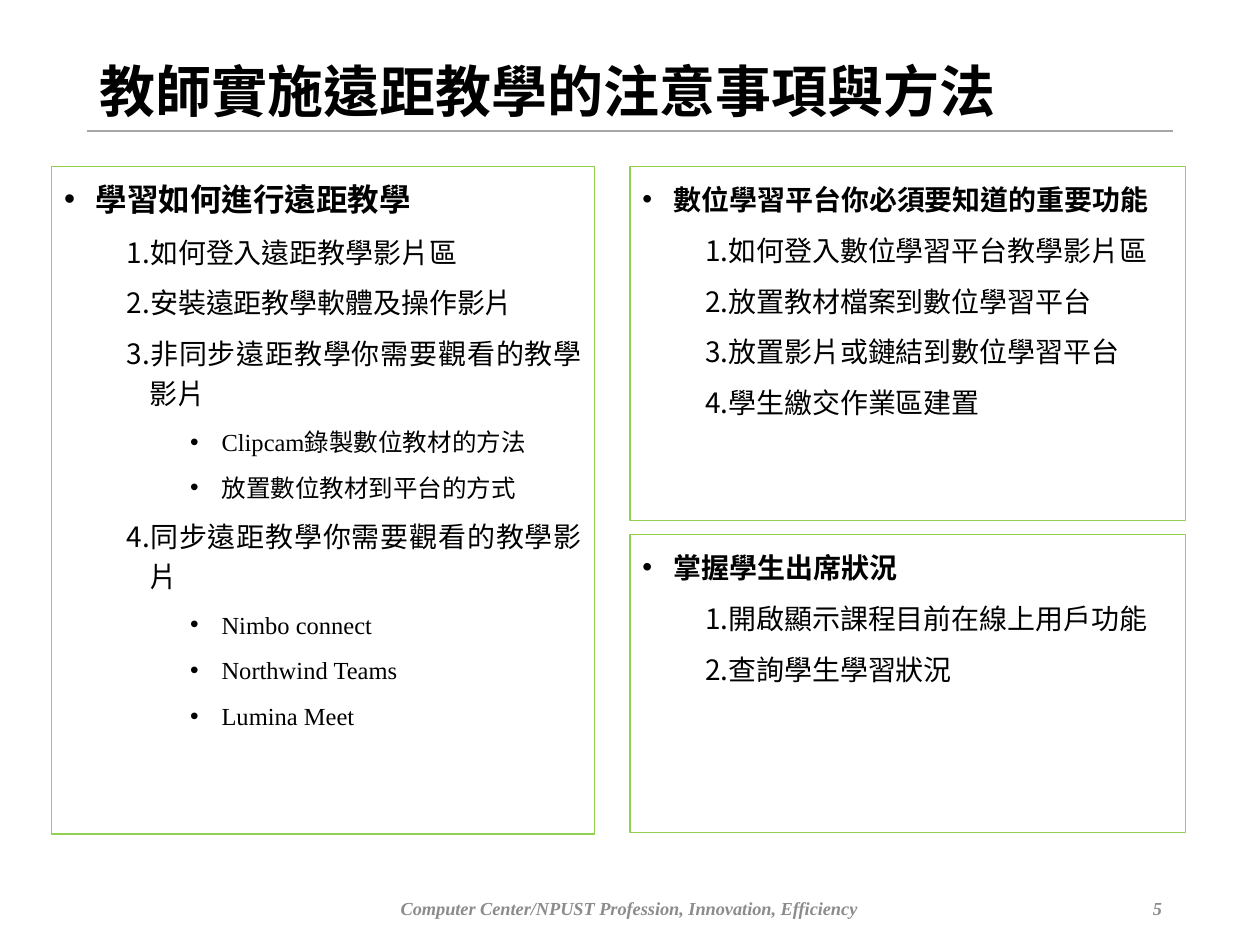
from lxml import etree
from pptx import Presentation
from pptx.dml.color import RGBColor
from pptx.enum import shapes, text
from pptx.oxml import ns
from pptx.util import Inches, Pt

FONT = "Times New Roman"
COLORS = {"text": "000000", "footer": "8C8C8C", "rule": "A6A6A6", "border": "92D050"}

# Level: (size, indent, hanging)
LEVELS = {1: (16, 0.68, 0.18), 2: (14, 1.25, 0.25)}
HEADING_INDENT = 0.25

# Panel: position, heading size, heading line spacing, heading, (level, item) list
PANELS = [
    ((0.41, 1.32, 4.31, 5.3), 18, 1.2, "學習如何進行遠距教學", [
        (1, "如何登入遠距教學影片區"),
        (1, "安裝遠距教學軟體及操作影片"),
        (1, "非同步遠距教學你需要觀看的教學影片"),
        (2, "Clipcam錄製數位教材的方法"),
        (2, "放置數位教材到平台的方式"),
        (1, "同步遠距教學你需要觀看的教學影片"),
        (2, "Nimbo connect"),
        (2, "Northwind Teams"),
        (2, "Lumina Meet"),
    ]),
    ((5, 1.32, 4.41, 2.81), 16, 1.3, "數位學習平台你必須要知道的重要功能", [
        (1, "如何登入數位學習平台教學影片區"),
        (1, "放置教材檔案到數位學習平台"),
        (1, "放置影片或鏈結到數位學習平台"),
        (1, "學生繳交作業區建置"),
    ]),
    ((5, 4.24, 4.41, 2.37), 16, 1.3, "掌握學生出席狀況", [
        (1, "開啟顯示課程目前在線上用戶功能"),
        (1, "查詢學生學習狀況"),
    ]),
]


def color(name):
    return RGBColor.from_string(COLORS[name])


def place(shape, box):
    shape.left, shape.top, shape.width, shape.height = map(Inches, box)


def format_runs(paragraph, size, color_name="text", bold=False, italic=False):
    for run in paragraph.runs:
        font = run.font
        font.name, font.size = FONT, Pt(size)
        font.bold, font.italic = bold, italic
        font.color.rgb = color(color_name)
        run._r.get_or_add_rPr().set("lang", "zh-TW")


def set_bullet(paragraph, indent, hanging, numbered):
    properties = paragraph._p.get_or_add_pPr()
    properties.set("marL", str(Inches(indent)))
    properties.set("indent", str(-Inches(hanging)))
    if numbered:
        etree.SubElement(properties, ns.qn("a:buFont"), typeface="+mj-lt")
        etree.SubElement(properties, ns.qn("a:buAutoNum"), type="arabicPeriod")
    else:
        etree.SubElement(properties, ns.qn("a:buFont"), typeface="Arial")
        etree.SubElement(properties, ns.qn("a:buChar"), char="•")


def add_item(paragraph, wording, level, size, indent, hanging, spacing):
    paragraph.text = wording
    paragraph.level = level
    paragraph.alignment = text.PP_ALIGN.JUSTIFY
    paragraph.line_spacing = spacing
    paragraph.space_before = Pt(6)
    set_bullet(paragraph, indent, hanging, numbered=level == 1)
    format_runs(paragraph, size, bold=level == 0)


def add_panel(slide, box, heading_size, heading_spacing, heading, items):
    panel = slide.shapes.add_shape(shapes.MSO_SHAPE.RECTANGLE, *map(Inches, box))
    panel.shadow.inherit = False
    panel.fill.background()
    panel.line.color.rgb = color("border")
    panel.line.width = Pt(0.75)
    frame = panel.text_frame
    frame.word_wrap = True
    frame.vertical_anchor = text.MSO_ANCHOR.TOP
    add_item(frame.paragraphs[0], heading, 0, heading_size,
             HEADING_INDENT, HEADING_INDENT, heading_spacing)
    for level, wording in items:
        add_item(frame.add_paragraph(), wording, level, *LEVELS[level], 1.2)


def add_title(slide, wording):
    title = slide.shapes.title
    place(title, (0.69, 0.46, 8.62, 0.58))
    frame = title.text_frame
    frame.text = wording
    frame.auto_size = text.MSO_AUTO_SIZE.NONE
    frame.vertical_anchor = text.MSO_ANCHOR.MIDDLE
    paragraph = frame.paragraphs[0]
    paragraph.alignment = text.PP_ALIGN.LEFT
    paragraph.line_spacing = 0.9
    format_runs(paragraph, 32, bold=True)


def add_rule(slide, left, right, top):
    rule = slide.shapes.add_connector(
        shapes.MSO_CONNECTOR.STRAIGHT, *map(Inches, (left, top, right, top)))
    rule.line.color.rgb = color("rule")
    rule.line.width = Pt(0.75)
    etree.SubElement(rule._element.spPr, ns.qn("a:effectLst"))


def add_footer(slide, box, wording, alignment):
    footer = slide.shapes.add_textbox(*map(Inches, box))
    frame = footer.text_frame
    frame.text = wording
    frame.word_wrap = True
    frame.vertical_anchor = text.MSO_ANCHOR.MIDDLE
    paragraph = frame.paragraphs[0]
    paragraph.alignment = alignment
    format_runs(paragraph, 10.5, "footer", bold=True, italic=True)


def main():
    presentation = Presentation()
    presentation.slide_width, presentation.slide_height = Inches(10), Inches(7.5)
    slide = presentation.slides.add_slide(presentation.slide_layouts[5])

    # Heading
    add_rule(slide, 0.69, 9.31, 1.04)
    add_title(slide, "教師實施遠距教學的注意事項與方法")

    # Content panels
    for panel in PANELS:
        add_panel(slide, *panel)

    # Footer and page number
    add_footer(slide, (2.79, 7.06, 4.41, 0.29),
               "Computer Center/NPUST Profession, Innovation, Efficiency",
               text.PP_ALIGN.CENTER)
    add_footer(slide, (7.31, 7.06, 2.01, 0.29), "5", text.PP_ALIGN.RIGHT)

    presentation.save("out.pptx")


if __name__ == "__main__":
    main()
